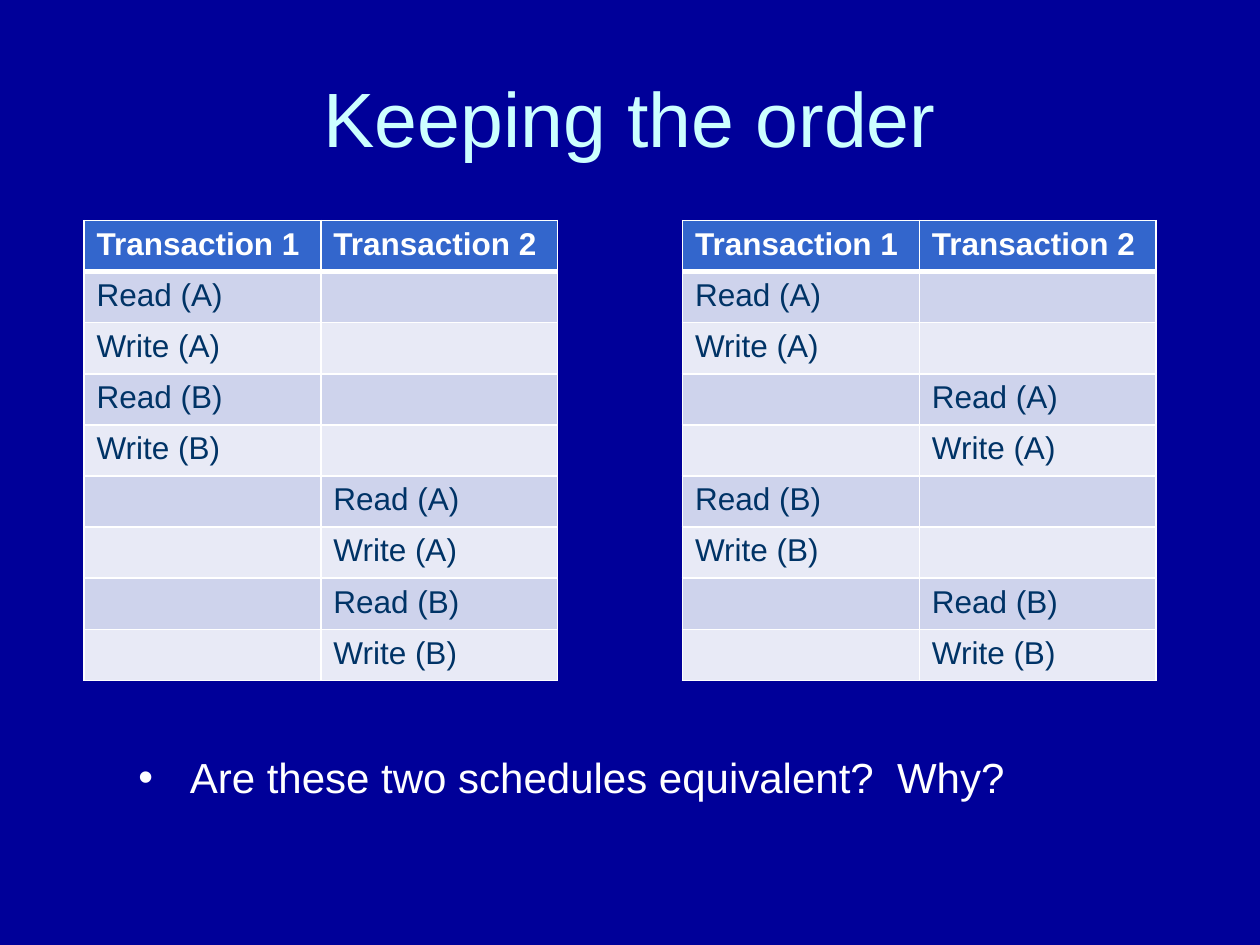
from lxml import etree
from pptx import Presentation
from pptx.dml.color import RGBColor
from pptx.enum.text import MSO_ANCHOR, PP_ALIGN
from pptx.oxml.ns import qn
from pptx.util import Pt

MIDDLE = MSO_ANCHOR.MIDDLE
TOP = MSO_ANCHOR.TOP
CENTER = PP_ALIGN.CENTER
TITLE_ONLY = 5
FONT = "Arial"
COLORS = {
    "background": "000099",
    "title": "CCFFFF",
    "white": "FFFFFF",
    "header": "3366CC",
    "odd_row": "CED3EC",
    "even_row": "E8EAF6",
    "cell_text": "003366",
}
HEADINGS = ("Transaction 1", "Transaction 2")
STEPS_A = ("Read (A)", "Write (A)")
STEPS_B = ("Read (B)", "Write (B)")
SERIAL = ((0, STEPS_A + STEPS_B), (1, STEPS_A + STEPS_B))
INTERLEAVED = ((0, STEPS_A), (1, STEPS_A), (0, STEPS_B), (1, STEPS_B))


def color(name):
    return RGBColor.from_string(COLORS[name])


def format_text(para, size, color_name, bold=False):
    for span in para.runs:
        span.font.name = FONT
        span.font.size = Pt(size)
        span.font.bold = bold
        span.font.color.rgb = color(color_name)


def place(shape, box):
    shape.left, shape.top, shape.width, shape.height = (Pt(length) for length in box)


def add_title(page, box, text):
    title = page.shapes.title
    place(title, box)
    frame = title.text_frame
    frame.text = text
    frame.vertical_anchor = MIDDLE
    frame.paragraphs[0].alignment = CENTER
    format_text(frame.paragraphs[0], 44, "title")


def set_borders(cell, bottom_width):
    properties = cell._tc.get_or_add_tcPr()
    widths = (("a:lnL", 1), ("a:lnR", 1), ("a:lnT", 1), ("a:lnB", bottom_width))
    for index, (tag, width) in enumerate(widths):
        line = etree.Element(qn(tag), w=str(Pt(width)))
        fill = etree.SubElement(line, qn("a:solidFill"))
        etree.SubElement(fill, qn("a:srgbClr"), val=COLORS["white"])
        properties.insert(index, line)


def schedule_rows(schedule):
    rows = [HEADINGS]
    for column, steps in schedule:
        rows += [(step, "") if column == 0 else ("", step) for step in steps]
    return rows


def add_schedule(page, box, schedule):
    rows = schedule_rows(schedule)
    left, top, width, height = (Pt(length) for length in box)
    table = page.shapes.add_table(
        len(rows), len(HEADINGS), left, top, width, height
    ).table
    for row_index, row in enumerate(rows):
        is_header = row_index == 0
        band = "odd_row" if row_index % 2 else "even_row"
        for column_index, text in enumerate(row):
            cell = table.cell(row_index, column_index)
            cell.fill.solid()
            cell.fill.fore_color.rgb = color("header" if is_header else band)
            set_borders(cell, 3 if is_header else 1)
            if text:
                para = cell.text_frame.paragraphs[0]
                para.text = text
                format_text(para, 18, "white" if is_header else "cell_text", is_header)


def add_question(page, box, text):
    frame = page.shapes.add_textbox(*(Pt(length) for length in box)).text_frame
    frame.word_wrap = True
    frame.vertical_anchor = TOP
    para = frame.paragraphs[0]
    para.text = text
    format_text(para, 24, "white")
    indent = Pt(29.4)
    properties = para._p.get_or_add_pPr()
    properties.set("marL", str(indent))
    properties.set("indent", str(-indent))
    etree.SubElement(properties, qn("a:buFont"), typeface=FONT)
    etree.SubElement(properties, qn("a:buChar"), char="•")


def main():
    deck = Presentation()
    deck.slide_width, deck.slide_height = Pt(720), Pt(540)
    page = deck.slides.add_slide(deck.slide_layouts[TITLE_ONLY])
    page.background.fill.solid()
    page.background.fill.fore_color.rgb = color("background")
    add_title(page, (36, 21.6, 648, 90), "Keeping the order")
    for left, schedule in ((48, SERIAL), (390, INTERLEAVED)):
        add_schedule(page, (left, 126, 270.72, 262.8), schedule)
    add_question(page, (72, 426, 528, 58), "Are these two schedules equivalent?  Why?")
    deck.save("out.pptx")


if __name__ == "__main__":
    main()
